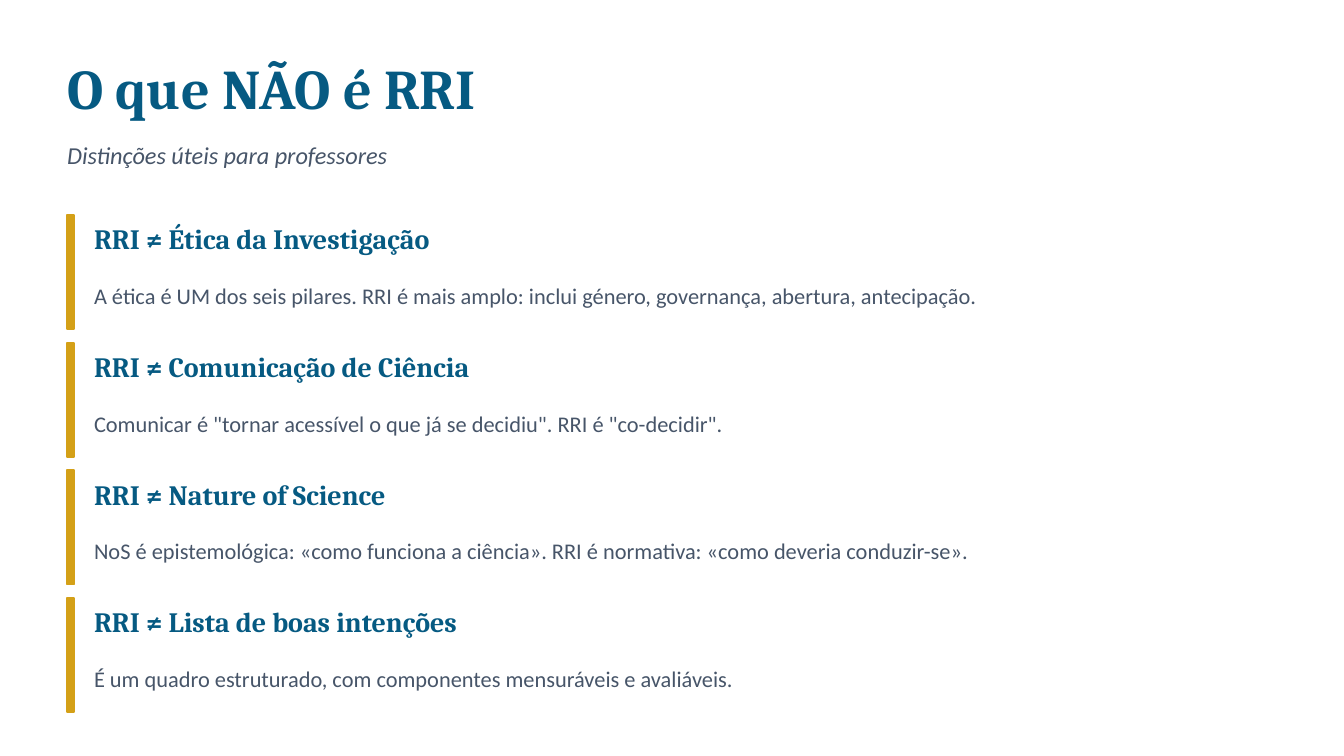
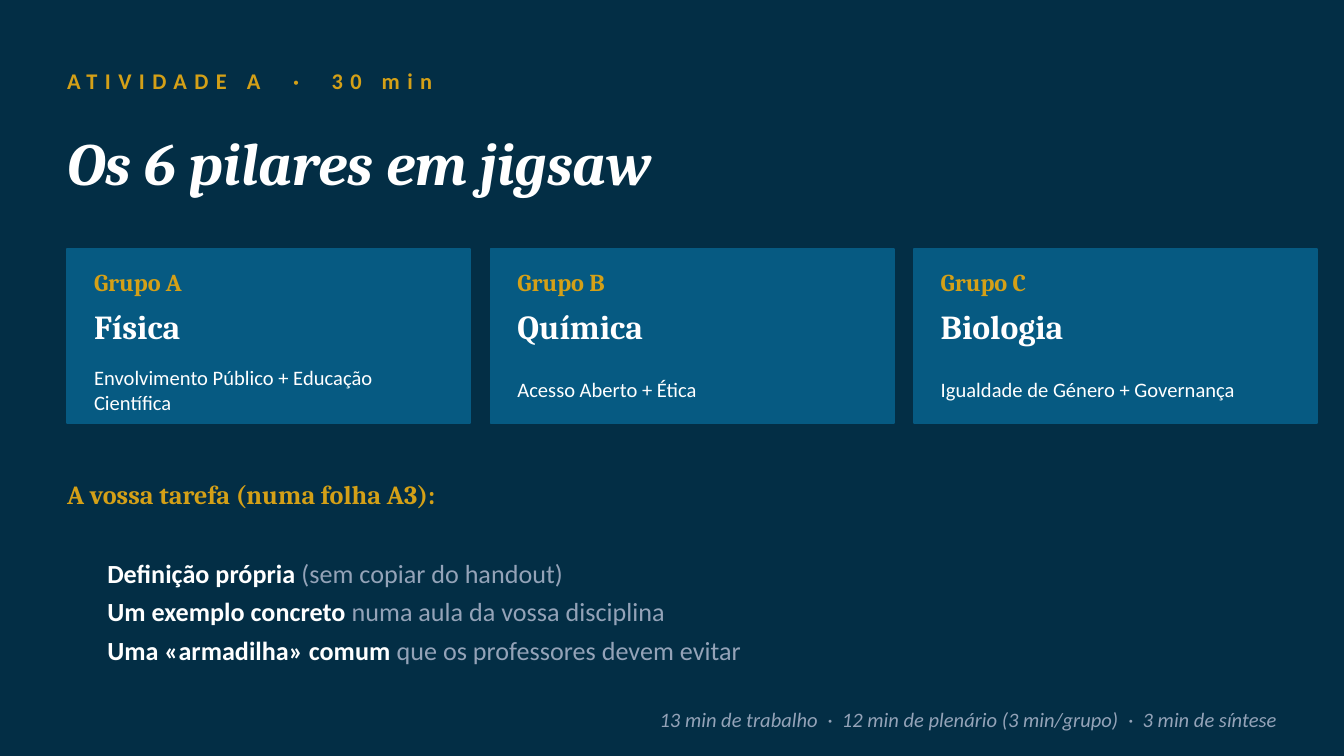
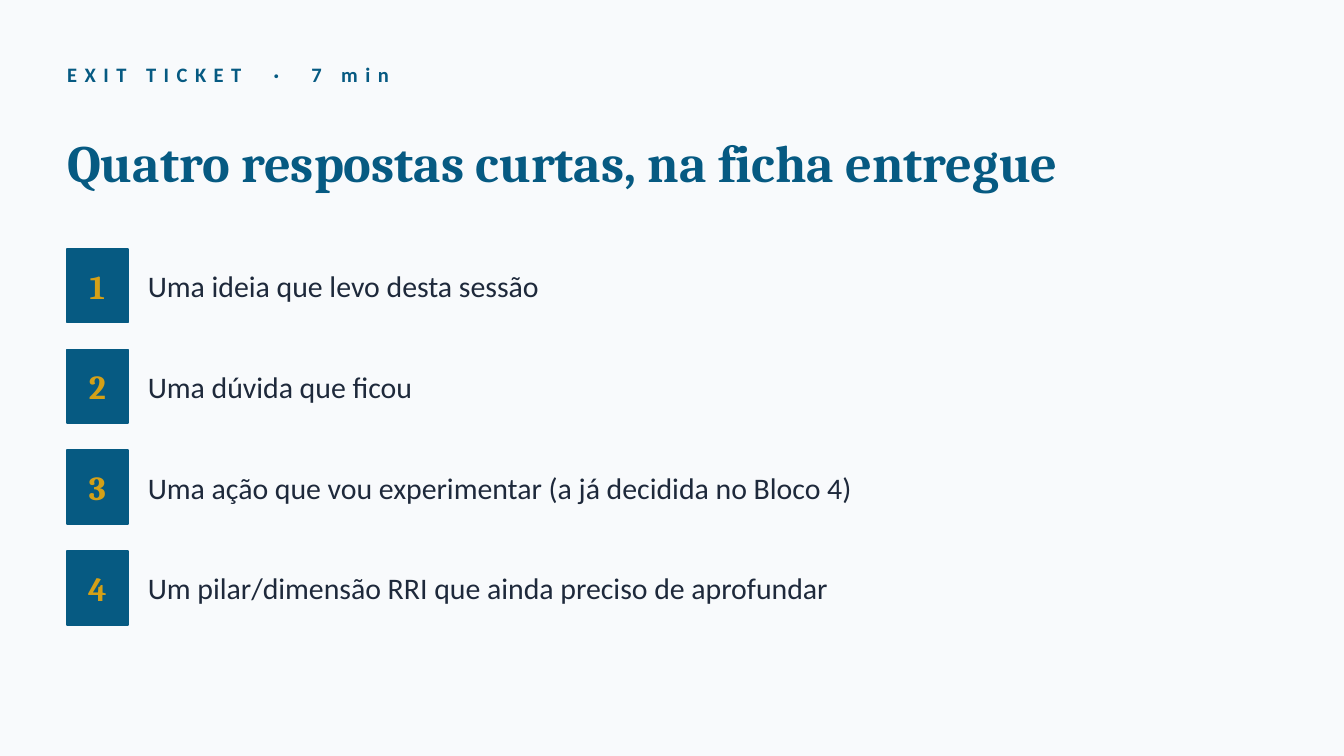
import pptx
import pptx.dml.color
import pptx.enum.shapes
import pptx.enum.text
import pptx.util

Pt = pptx.util.Pt
ALIGN = pptx.enum.text.PP_ALIGN
MIDDLE = pptx.enum.text.MSO_ANCHOR.MIDDLE

HUES = {
    "white": "FFFFFF", "pale": "F8FAFC", "night": "032E45", "blue": "065A82",
    "gold": "D4A017", "slate": "475569", "mist": "94A3B8", "ink": "1E293B",
}
HEAD, BODY = "Cambria", "Calibri"
LEFT, WIDE = 36, 648
TOP = 133.2  # first row of cards and steps
TRACK = 4    # letter spacing of the kicker


def rgb(hue):
    return pptx.dml.color.RGBColor.from_string(HUES[hue])


def style(size, hue, name=BODY, bold=False, italic=False):
    return {"size": Pt(size), "name": name, "bold": bold, "italic": italic, "hue": hue}


def add_run(par, text, look, track=0):
    run = par.add_run()
    run.text = text
    for key, value in look.items():
        if key == "hue":
            run.font.color.rgb = rgb(value)
        else:
            setattr(run.font, key, value)
    if track:
        run._r.get_or_add_rPr().set("spc", str(round(track * 100)))


def add_dots(par, text, look, track, gap):
    """Write text whose middle dots stand in wider gaps."""
    for i, part in enumerate(text.split(" ·")):
        if i:
            add_run(par, " ·", look, gap)
        add_run(par, part, look, track)


def set_frame(shape, align=ALIGN.LEFT, inset=0):
    frame = shape.text_frame
    form = {"word_wrap": True, "auto_size": pptx.enum.text.MSO_AUTO_SIZE.NONE,
            "vertical_anchor": MIDDLE}
    form.update({f"margin_{side}": Pt(inset) for side in ("left", "top", "right", "bottom")})
    for key, value in form.items():
        setattr(frame, key, value)
    par = frame.paragraphs[0]
    par.alignment = align
    return par


def add_box(slide, box, align=ALIGN.LEFT):
    return set_frame(slide.shapes.add_textbox(*map(Pt, box)), align)


def add_text(slide, box, text, look):
    add_run(add_box(slide, box), text, look)


def add_block(slide, box, hue):
    block = slide.shapes.add_shape(pptx.enum.shapes.MSO_SHAPE.RECTANGLE, *map(Pt, box))
    block.shadow.inherit = False
    block.fill.solid()
    block.fill.fore_color.rgb = block.line.color.rgb = rgb(hue)
    block.line.width = Pt(1)
    return block


def add_slide(deck, ground, title, box, look):
    slide = deck.slides.add_slide(deck.slide_layouts[5])
    slide.background.fill.solid()
    slide.background.fill.fore_color.rgb = rgb(ground)
    head = slide.shapes.title
    for key, value in zip(("left", "top", "width", "height"), box):
        setattr(head, key, Pt(value))
    add_run(set_frame(head), title, look)
    return slide


def add_kicker(slide, top, text, look):
    add_dots(add_box(slide, (LEFT, top, WIDE, 28.8)), text, look, TRACK, 10.7)


def add_claim(slide, box, claim, reason):
    left, top, width, height = box
    add_block(slide, (left, top, 3.6, height), "gold")
    left, width = left + 14.4, width - 14.4
    add_text(slide, (left, top, width, 25.2), claim, style(15, "blue", HEAD, True))
    add_text(slide, (left, top + 25.2, width, 36), reason, style(12, "slate"))


def add_card(slide, box, group, field, themes):
    add_block(slide, box, "blue")
    left, top, width = box[0] + 14.4, box[1] + 7.2, box[2] - 28.8
    rows = (
        (group, 21.6, style(13, "gold", HEAD, True)),
        (field, 25.2, style(18, "white", HEAD, True)),
        (themes, 43.2, style(11, "white")),
    )
    for text, height, look in rows:
        add_text(slide, (left, top, width, height), text, look)
        top += height


def add_tasks(slide, box, tasks):
    shape = slide.shapes.add_textbox(*map(Pt, box))
    par = set_frame(shape, inset=7.2)
    for i, (strong, rest) in enumerate(tasks):
        if i:
            par = shape.text_frame.add_paragraph()
        par.space_after = Pt(4)
        add_run(par, strong + " ", style(14, "white", bold=True))
        add_run(par, rest, style(14, "mist"))


def add_step(slide, box, number, text):
    left, top, width, height = box
    badge = add_block(slide, (left, top, 32.4, height), "blue")
    add_run(set_frame(badge, ALIGN.CENTER), str(number), style(18, "gold", HEAD, True))
    add_text(slide, (left + 43.2, top, width - 43.2, height), text, style(16, "ink"))


def make_claims(deck):
    slide = add_slide(deck, "white", "O que NÃO é RRI", (LEFT, 25.2, WIDE, 43.2),
                      style(30, "blue", HEAD, True))
    add_text(slide, (LEFT, 68.4, WIDE, 28.8), "Distinções úteis para professores",
             style(13, "slate", italic=True))
    claims = (
        ("Ética da Investigação",
         "A ética é UM dos seis pilares. RRI é mais amplo: inclui género, governança, abertura, antecipação."),
        ("Comunicação de Ciência",
         'Comunicar é "tornar acessível o que já se decidiu". RRI é "co-decidir".'),
        ("Nature of Science",
         "NoS é epistemológica: «como funciona a ciência». RRI é normativa: «como deveria conduzir-se»."),
        ("Lista de boas intenções",
         "É um quadro estruturado, com componentes mensuráveis e avaliáveis."),
    )
    for i, (other, reason) in enumerate(claims):
        add_claim(slide, (LEFT, 115.2 + 68.4 * i, WIDE, 61.2), "RRI ≠ " + other, reason)


def make_jigsaw(deck):
    slide = add_slide(deck, "night", "Os 6 pilares em jigsaw", (LEFT, 61.2, WIDE, 50.4),
                      style(32, "white", HEAD, True, True))
    add_kicker(slide, 28.8, "ATIVIDADE A · 30 min", style(12, "gold", bold=True))
    cards = (
        ("Grupo A", "Física", "Envolvimento Público + Educação Científica"),
        ("Grupo B", "Química", "Acesso Aberto + Ética"),
        ("Grupo C", "Biologia", "Igualdade de Género + Governança"),
    )
    for i, card in enumerate(cards):
        add_card(slide, (LEFT + 226.8 * i, TOP, 216, 93.6), *card)
    add_text(slide, (LEFT, 252, WIDE, 25.2), "A vossa tarefa (numa folha A3):",
             style(14, "gold", HEAD, True))
    add_tasks(slide, (LEFT + 14.4, 280.8, WIDE - 14.4, 93.6), (
        ("Definição própria", "(sem copiar do handout)"),
        ("Um exemplo concreto", "numa aula da vossa disciplina"),
        ("Uma «armadilha» comum", "que os professores devem evitar"),
    ))
    add_dots(add_box(slide, (LEFT, 374.4, WIDE, 21.6), ALIGN.RIGHT),
             "13 min de trabalho · 12 min de plenário (3 min/grupo) · 3 min de síntese",
             style(11, "mist", italic=True), 0, 2.5)


def make_exit(deck):
    slide = add_slide(deck, "pale", "Quatro respostas curtas, na ficha entregue",
                      (LEFT, 61.2, WIDE, 50.4), style(28, "blue", HEAD, True))
    add_kicker(slide, 25.2, "EXIT TICKET · 7 min", style(11, "blue", bold=True))
    steps = (
        "Uma ideia que levo desta sessão",
        "Uma dúvida que ficou",
        "Uma ação que vou experimentar (a já decidida no Bloco 4)",
        "Um pilar/dimensão RRI que ainda preciso de aprofundar",
    )
    for i, text in enumerate(steps):
        add_step(slide, (LEFT, TOP + 54 * i, WIDE, 39.6), i + 1, text)


def main():
    deck = pptx.Presentation()
    deck.slide_width, deck.slide_height = Pt(720), Pt(405)
    for make in (make_claims, make_jigsaw, make_exit):
        make(deck)
    deck.save("out.pptx")


if __name__ == "__main__":
    main()
